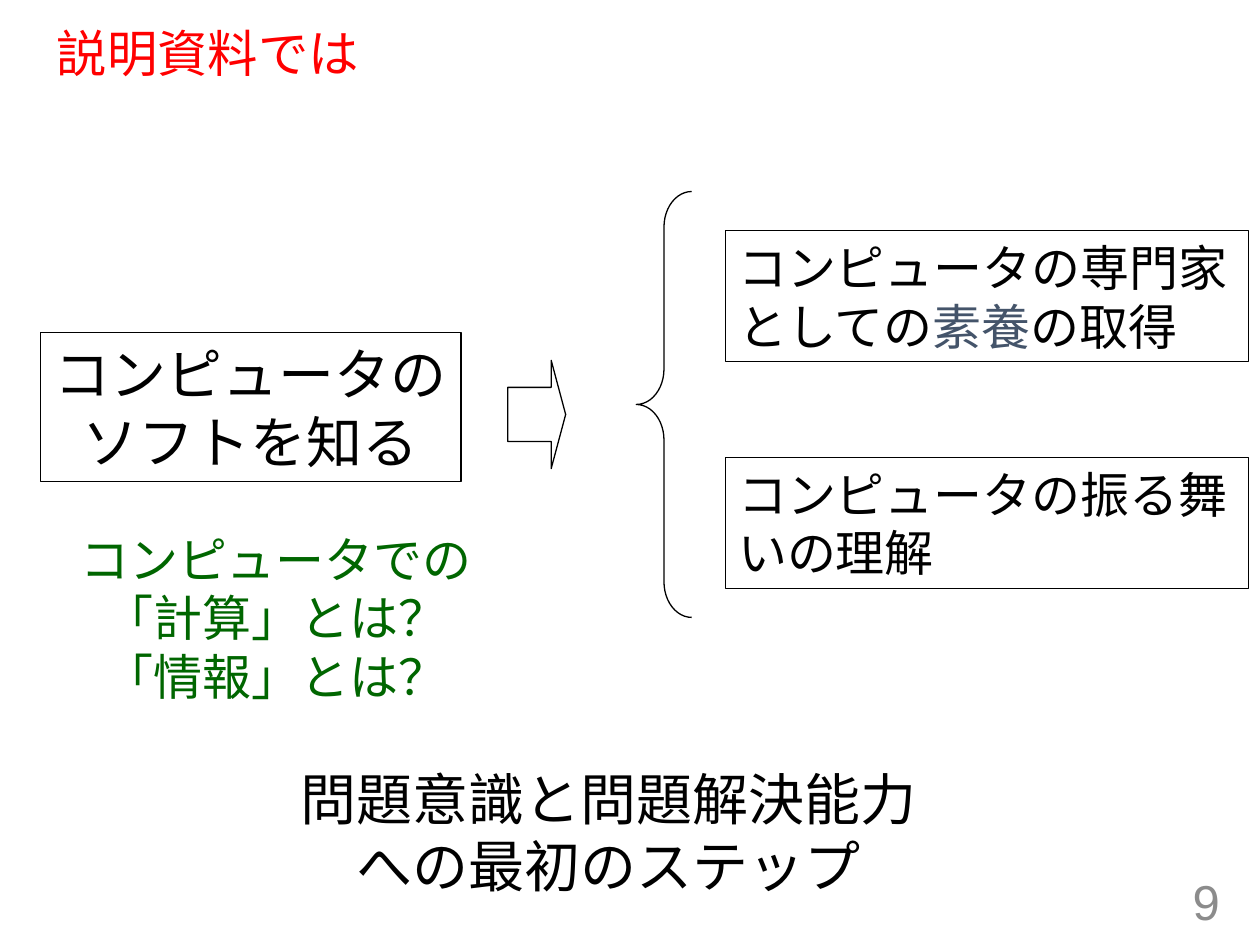
"""Build the slide on what learning about computer software leads to."""
from pptx import Presentation
from pptx import util as u
from pptx.dml import color
from pptx.enum import shapes, text

INK = {"black": "000000", "red": "FF0000", "green": "006600", "slate": "44546A", "gray": "8C8C8C"}
ALIGN = text.PP_ALIGN
KIND = shapes.MSO_SHAPE


def write(shape, lines, size, ink="black", align=ALIGN.LEFT, face="Calibri", wrap=True):
    frame = shape.text_frame
    frame.word_wrap = wrap
    frame.text = "\n".join(lines)
    for para in frame.paragraphs:
        para.alignment = align
        for run in para.runs:
            run.font.size = u.Pt(size)
            run.font.name = face
            run.font.color.rgb = color.RGBColor.from_string(INK[ink])
    return frame


def outline(kind, *place):
    shape = slide.shapes.add_shape(kind, *map(u.Inches, place))
    shape.shadow.inherit = False
    shape.fill.background()
    shape.line.color.rgb = color.RGBColor.from_string(INK["black"])
    shape.line.width = u.Pt(0.75)
    return shape


deck = Presentation()
deck.slide_width, deck.slide_height = u.Inches(10), u.Inches(7.5)
slide = deck.slides.add_slide(deck.slide_layouts[5])

title = slide.shapes.title
title.left, title.top, title.width, title.height = map(u.Inches, (0.35, 0.19, 9.25, 0.51))
frame = write(title, ["説明資料では"], 28.8, "red", face="Arial")
frame.vertical_anchor = text.MSO_ANCHOR.MIDDLE
frame.auto_size = text.MSO_AUTO_SIZE.NONE
frame.paragraphs[0].line_spacing = 0.9

topic = outline(KIND.RECTANGLE, 0.32, 2.64, 3.34, 1.18)
write(topic, ["コンピュータの", "ソフトを知る"], 32, align=ALIGN.CENTER, wrap=False)

arrow = outline(KIND.RIGHT_ARROW, 4.03, 2.86, 0.46, 0.86)
arrow.adjustments[1] = 0.25
brace = outline(KIND.LEFT_BRACE, 5.05, 1.52, 0.44, 3.38)
brace.adjustments[0] = 0.64

goals = [
    (1.83, ["コンピュータの専門家", "としての"]),
    (3.63, ["コンピュータの振る舞いの理解"]),
]
frames = [write(outline(KIND.RECTANGLE, 5.76, top, 4.15, 1.04), lines, 28) for top, lines in goals]

para = frames[0].paragraphs[1]
for words, ink in [("素養", "slate"), ("の取得", "black")]:
    run = para.add_run()
    run.text = words
    run.font.size = u.Pt(28)
    run.font.name = "Calibri"
    run.font.color.rgb = color.RGBColor.from_string(INK[ink])

notes = [
    ((0.52, 4.15, 3.34, 1.51), ["コンピュータでの", "「計算」とは？", "「情報」とは？"], 28, "green"),
    ((2.26, 6.02, 5.14, 1.18), ["問題意識と問題解決能力", "への最初のステップ"], 32, "black"),
]
for place, lines, size, ink in notes:
    box = slide.shapes.add_textbox(*map(u.Inches, place))
    write(box, lines, size, ink, ALIGN.CENTER, wrap=False)

page = slide.shapes.add_textbox(*map(u.Inches, (7.53, 6.95, 2.25, 0.4)))
frame = write(page, ["9"], 28, "gray", ALIGN.RIGHT, "Arial")
frame.vertical_anchor = text.MSO_ANCHOR.MIDDLE

deck.save("out.pptx")
